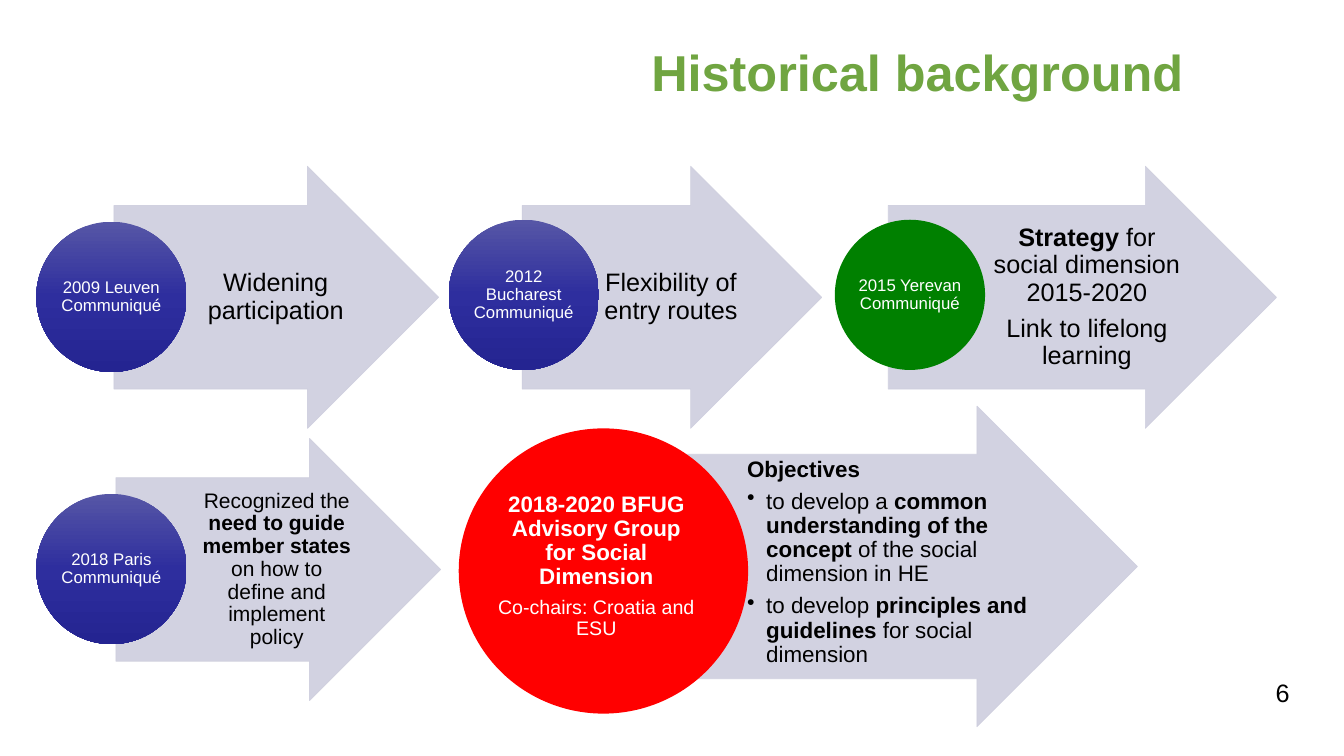
import copy
import dataclasses

import lxml.etree
import pptx
import pptx.dml.color
import pptx.enum.shapes
import pptx.enum.text
import pptx.oxml.ns
import pptx.util

Inches = pptx.util.Inches
Pt = pptx.util.Pt
Shape = pptx.enum.shapes.MSO_SHAPE
Align = pptx.enum.text.PP_ALIGN
Anchor = pptx.enum.text.MSO_ANCHOR
qn = pptx.oxml.ns.qn


@dataclasses.dataclass(frozen=True)
class Theme:
    font: str = "Arial"
    title: str = "70A541"
    dark: str = "000000"
    light: str = "FFFFFF"
    arrow: str = "CECEDE"
    blues: tuple = ((0, "5656A6"), (0.5, "2E2E9E"), (1, "242491"))
    green: str = "008000"
    red: str = "FF0000"
    title_size: int = 36
    body_size: int = 18
    objectives_size: int = 16
    chairs_size: int = 14
    policy_size: int = 15
    label_size: int = 12


THEME = Theme()
ARROW_MARGINS = (0.05, 0.01, 0.03, 0.01)
CIRCLE_MARGINS = (0.01, 0.01, 0.01, 0.01)
CIRCLE_SIZE = 1.49
LABEL_SIZE = 1.05


def rgb(value):
    return pptx.dml.color.RGBColor.from_string(value)


def style_span(span, size, color, bold=False):
    span.font.name = THEME.font
    span.font.size = Pt(size)
    span.font.bold = bold
    span.font.color.rgb = rgb(color)


def add_bullet(para):
    properties = para._p.get_or_add_pPr()
    properties.set("marL", str(Inches(0.19)))
    properties.set("indent", str(-Inches(0.19)))
    lxml.etree.SubElement(properties, qn("a:buChar"), char="•")


def add_text(page, place, paragraphs, color, margins, align=Align.CENTER):
    """Each paragraph is (size, [(text, bold), ...], bulleted)."""
    box = page.shapes.add_textbox(*map(Inches, place))
    frame = box.text_frame
    frame.word_wrap = True
    frame.vertical_anchor = Anchor.MIDDLE
    (frame.margin_left, frame.margin_top,
     frame.margin_right, frame.margin_bottom) = map(Inches, margins)
    for index, (size, spans, bulleted) in enumerate(paragraphs):
        para = frame.add_paragraph() if index else frame.paragraphs[0]
        para.alignment = align
        para.line_spacing = 0.9
        para.space_after = Pt(round(size * 0.35, 1))
        if bulleted:
            add_bullet(para)
        for text, bold in spans:
            span = para.add_run()
            span.text = text
            style_span(span, size, color, bold)


def add_arrow(page, place):
    arrow = page.shapes.add_shape(Shape.RIGHT_ARROW, *map(Inches, place))
    arrow.shadow.inherit = False
    arrow.adjustments[0], arrow.adjustments[1] = 0.7, 0.5
    arrow.fill.solid()
    arrow.fill.fore_color.rgb = rgb(THEME.arrow)
    arrow.line.color.rgb = rgb(THEME.arrow)
    arrow.line.width = Pt(0.5)
    for color in arrow._element.spPr.iter(qn("a:srgbClr")):
        lxml.etree.SubElement(color, qn("a:alpha"), val="90000")


def add_circle(page, place, color=None):
    """Without a colour the circle takes the blue gradient."""
    circle = page.shapes.add_shape(Shape.OVAL, *map(Inches, place))
    circle.shadow.inherit = False
    circle.line.fill.background()
    if color:
        circle.fill.solid()
        circle.fill.fore_color.rgb = rgb(color)
        return
    circle.fill.gradient()
    circle.fill.gradient_angle = 270
    stop_list = next(circle._element.spPr.iter(qn("a:gsLst")))
    stop_list.insert(1, copy.deepcopy(stop_list[0]))
    for stop, (position, shade) in zip(circle.fill.gradient_stops, THEME.blues):
        stop.position = position
        stop.color.rgb = rgb(shade)


def add_milestone(page, arrow, text_place, paragraphs, corner, label, color=None):
    add_arrow(page, arrow)
    add_text(page, text_place, paragraphs, THEME.dark, ARROW_MARGINS)
    left, top = corner
    add_circle(page, (left, top, CIRCLE_SIZE, CIRCLE_SIZE), color)
    inset = (CIRCLE_SIZE - LABEL_SIZE) / 2
    add_text(page, (left + inset, top + inset, LABEL_SIZE, LABEL_SIZE),
             [(THEME.label_size, [(label, False)], False)],
             THEME.light, CIRCLE_MARGINS)


def add_advisory_group(page):
    size = THEME.objectives_size
    add_arrow(page, (6.26, 4.03, 5.02, 3.18))
    add_text(page, (7.36, 4.47, 3.03, 2.22), [
        (size, [("Objectives", True)], False),
        (size, [("to develop a ", False),
                ("common understanding of the concept", True),
                (" of the social dimension in HE", False)], True),
        (size, [("to develop ", False), ("principles and guidelines ", True),
                ("for social dimension", False)], True),
    ], THEME.dark, ARROW_MARGINS, Align.LEFT)
    add_circle(page, (4.55, 4.25, 2.87, 2.83), THEME.red)
    add_text(page, (4.9, 4.62, 2.03, 2), [
        (size, [("2018-2020 BFUG Advisory Group for Social Dimension", True)], False),
        (THEME.chairs_size, [("Co-chairs: Croatia and ESU", False)], False),
    ], THEME.light, CIRCLE_MARGINS)


def add_title(page, text):
    title = page.shapes.title
    title.left, title.top, title.width, title.height = map(
        Inches, (6.36, 0.33, 6.42, 0.75))
    title.text_frame.text = text
    title.text_frame.vertical_anchor = Anchor.MIDDLE
    para = title.text_frame.paragraphs[0]
    para.alignment = Align.LEFT
    style_span(para.runs[0], THEME.title_size, THEME.title, True)


def add_page_number(page, number):
    box = page.shapes.add_textbox(*map(Inches, (10.11, 6.67, 2.78, 0.5)))
    box.text_frame.word_wrap = True
    box.text_frame.text = number
    para = box.text_frame.paragraphs[0]
    para.alignment = Align.RIGHT
    style_span(para.runs[0], THEME.body_size, THEME.dark)


def main():
    deck = pptx.Presentation()
    deck.slide_width, deck.slide_height = Inches(13.33), Inches(7.5)
    page = deck.slides.add_slide(deck.slide_layouts[5])
    add_title(page, "Historical background")

    # Upper row: communiqués from 2009 to 2015
    size = THEME.body_size
    add_milestone(page, (1.13, 1.65, 3.22, 2.6), (1.94, 2.04, 1.57, 1.82),
                  [(size, [("Widening participation", False)], False)],
                  (0.36, 2.2), "2009 Leuven Communiqué")
    add_milestone(page, (5.18, 1.65, 2.97, 2.6), (5.92, 2.04, 1.45, 1.82),
                  [(size, [("Flexibility of entry routes", False)], False)],
                  (4.45, 2.18), "2012 Bucharest Communiqué")
    add_milestone(page, (8.81, 1.65, 3.85, 2.6), (9.78, 2.04, 1.98, 1.82),
                  [(size, [("Strategy", True),
                           (" for social dimension 2015-2020", False)], False),
                   (size, [("Link to lifelong learning", False)], False)],
                  (8.28, 2.18), "2015 Yerevan Communiqué", THEME.green)

    # Lower row: Paris and the advisory group
    add_milestone(page, (1.15, 4.35, 3.22, 2.6), (1.95, 4.74, 1.57, 1.82),
                  [(THEME.policy_size,
                    [("Recognized the ", False),
                     ("need to guide member states ", True),
                     ("on how to define and implement policy", False)], False)],
                  (0.36, 4.9), "2018 Paris Communiqué")
    add_advisory_group(page)
    add_page_number(page, "6")
    deck.save("out.pptx")


if __name__ == "__main__":
    main()
